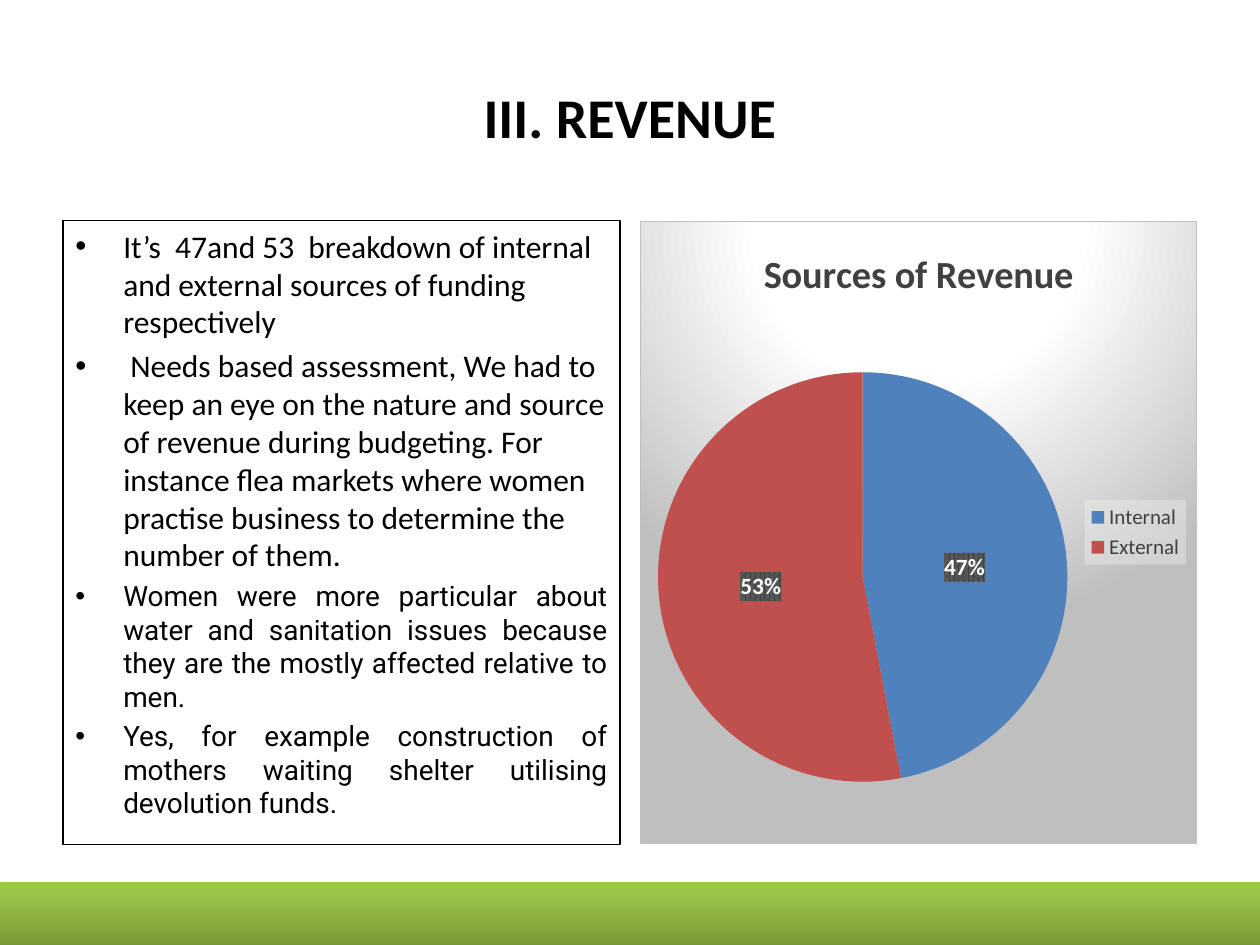
from lxml import etree
from pptx import Presentation
from pptx.chart.data import CategoryChartData
from pptx.dml.color import RGBColor
from pptx.enum.chart import XL_CHART_TYPE as ChartType
from pptx.enum.chart import XL_LABEL_POSITION as LabelPosition
from pptx.enum.chart import XL_LEGEND_POSITION as LegendPosition
from pptx.enum.shapes import MSO_SHAPE as Shape
from pptx.enum.text import MSO_ANCHOR as Anchor
from pptx.enum.text import PP_ALIGN as Align
from pptx.oxml import parse_xml
from pptx.oxml.ns import nsdecls, qn
from pptx.util import Inches, Pt

TITLE = "III. REVENUE"
FINDINGS = [
    ("It’s  47and 53  breakdown of internal and external sources of funding respectively",
     18, "Calibri", Align.LEFT),
    (" Needs based assessment, We had to keep an eye on the nature and source of revenue "
     "during budgeting. For instance flea markets where women practise business to "
     "determine the number of them.", 18, "Calibri", Align.LEFT),
    ("Women were more particular about water and sanitation issues because they are the "
     "mostly affected relative to men.", 16, "Roboto", Align.JUSTIFY),
    ("Yes, for example construction of mothers waiting shelter utilising devolution funds.",
     16, "Roboto", Align.JUSTIFY),
]
REVENUE = {"Internal": (47, "4F81BD"), "External": (53, "C0504D")}

PANEL_TOP, PANEL_WIDTH, PANEL_HEIGHT = 1.75, 4.42, 4.95


def rgb(value):
    return RGBColor.from_string(value)


def box(left, top, width, height):
    return [Inches(length) for length in (left, top, width, height)]


def gradient(stops, direction):
    """Return gradient fill XML from (percent, colour) stops and a direction element."""
    stop_list = "".join(
        f'<a:gs pos="{percent * 1000}"><a:srgbClr val="{color}"/></a:gs>'
        for percent, color in stops)
    return f'<a:gradFill {nsdecls("a")}><a:gsLst>{stop_list}</a:gsLst>{direction}</a:gradFill>'


def fill_chart_part(part, fill, line=""):
    """Give a chart element a fill; its text properties must already exist."""
    part.find(qn("c:txPr")).addprevious(
        parse_xml(f'<c:spPr {nsdecls("c", "a")}>{fill}{line}</c:spPr>'))


class RevenueSlide:
    ink = "000000"
    muted = "404040"
    face = "Calibri"

    def __init__(self, presentation):
        self.slide = presentation.slides.add_slide(presentation.slide_layouts[6])
        self.shapes = self.slide.shapes

    def style(self, font, size, color, bold=False, face=face):
        font.name, font.size, font.bold = face, Pt(size), bold
        font.color.rgb = rgb(color)

    def title(self, text, *place):
        frame = self.shapes.add_textbox(*box(*place)).text_frame
        frame.word_wrap = True
        frame.vertical_anchor = Anchor.MIDDLE
        frame.text = text
        heading = frame.paragraphs[0]
        heading.alignment = Align.CENTER
        self.style(heading.runs[0].font, 32, self.ink, bold=True)

    def bullets(self, items, *place):
        panel = self.shapes.add_textbox(*box(*place))
        panel.line.color.rgb = rgb(self.ink)
        panel.line.width = Pt(0.75)
        frame = panel.text_frame
        frame.word_wrap = True
        frame.text = "\n".join(text for text, *_ in items)
        for paragraph, (_, size, face, alignment) in zip(frame.paragraphs, items):
            paragraph.alignment = alignment
            paragraph.space_before = Pt(size * 0.2)
            self.style(paragraph.runs[0].font, size, self.ink, face=face)
            properties = paragraph._p.get_or_add_pPr()
            indent = Inches(0.38)
            properties.set("marL", str(indent))
            properties.set("indent", str(-indent))
            etree.SubElement(properties, qn("a:buFont"), typeface="Arial")
            etree.SubElement(properties, qn("a:buChar"), char="•")

    def band(self, stops, *place):
        band = self.shapes.add_shape(Shape.RECTANGLE, *box(*place))
        band.line.fill.background()
        band.shadow.inherit = False
        properties = band._element.spPr
        properties.find(qn("a:ln")).addprevious(
            parse_xml(gradient(stops, '<a:lin ang="16200000" scaled="0"/>')))
        properties.find(qn("a:effectLst")).append(parse_xml(
            f'<a:outerShdw {nsdecls("a")} blurRad="{Pt(3.1)}" dist="{Pt(1.8)}" dir="5400000" '
            'rotWithShape="0"><a:srgbClr val="000000"><a:alpha val="35000"/></a:srgbClr>'
            '</a:outerShdw>'))

    def pie(self, name, slices, *place):
        data = CategoryChartData()
        data.categories = list(slices)
        data.add_series(name, [share for share, _ in slices.values()])
        chart = self.shapes.add_chart(ChartType.PIE, *box(*place), data).chart
        self.style(chart.font, 10, self.ink)

        chart.has_title = True
        chart.chart_title.include_in_layout = False
        heading = chart.chart_title.text_frame
        heading.text = name
        self.style(heading.paragraphs[0].runs[0].font, 22, self.muted, bold=True)

        chart.has_legend = True
        chart.legend.position = LegendPosition.RIGHT
        chart.legend.include_in_layout = False
        self.style(chart.legend.font, 12, self.muted)

        chart.plots[0].vary_by_categories = True
        revenue = chart.plots[0].series[0]
        for index, (_, color) in enumerate(slices.values()):
            fill = revenue.points[index].format.fill
            fill.solid()
            fill.fore_color.rgb = rgb(color)

        labels = revenue.data_labels
        labels.show_percentage = True
        labels.show_value = False
        labels.number_format = "0%"
        labels.number_format_is_linked = False
        labels.position = LabelPosition.CENTER
        self.style(labels.font, 13.3, "FFFFFF", bold=True)
        self.chart_backgrounds(chart.element)

    def chart_backgrounds(self, chart_space):
        spotlight = gradient(
            [(0, "FFFFFF"), (39, "FFFFFF"), (100, "BFBFBF")],
            '<a:path path="circle"><a:fillToRect l="50000" t="-80000" r="50000" b="180000"/>'
            '</a:path>')
        border = (f'<a:ln w="{Pt(0.75)}"><a:solidFill><a:srgbClr val="BFBFBF"/>'
                  '</a:solidFill></a:ln>')
        fill_chart_part(chart_space, spotlight, border)
        fill_chart_part(
            chart_space.find(".//" + qn("c:legend")),
            '<a:solidFill><a:srgbClr val="F2F2F2"><a:alpha val="39000"/></a:srgbClr>'
            '</a:solidFill>')
        fill_chart_part(
            chart_space.find(".//" + qn("c:dLbls")),
            '<a:pattFill prst="pct75"><a:fgClr><a:srgbClr val="404040"/></a:fgClr>'
            '<a:bgClr><a:srgbClr val="595959"/></a:bgClr></a:pattFill>')


def main():
    presentation = Presentation()
    presentation.slide_width, presentation.slide_height = Inches(10), Inches(7.5)
    page = RevenueSlide(presentation)
    page.title(TITLE, 0.5, 0.3, 9, 1.25)
    page.bullets(FINDINGS, 0.5, PANEL_TOP, PANEL_WIDTH, PANEL_HEIGHT)
    page.band([(0, "779737"), (80, "9BC348"), (100, "9DC746")], 0, 7, 10.21, 0.51)
    page.pie("Sources of Revenue", REVENUE, 5.08, PANEL_TOP, PANEL_WIDTH, PANEL_HEIGHT)
    presentation.save("out.pptx")


if __name__ == "__main__":
    main()
